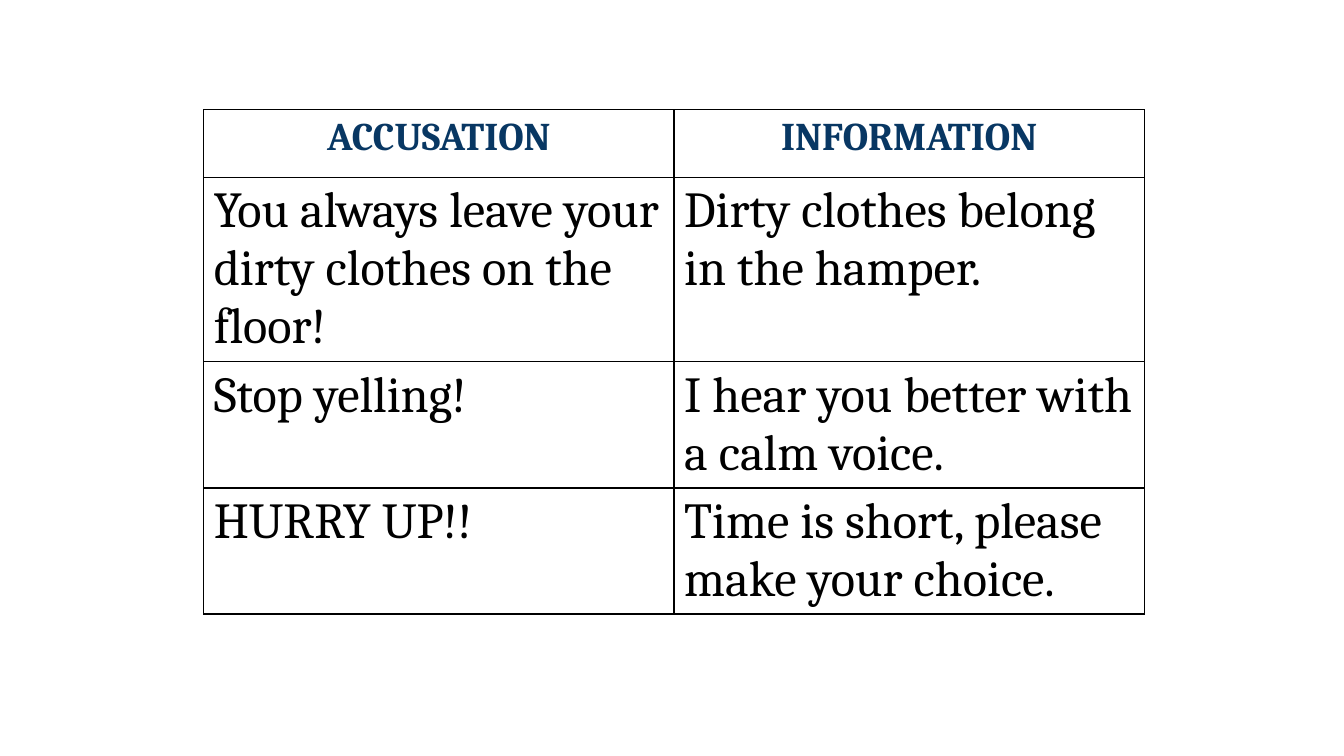
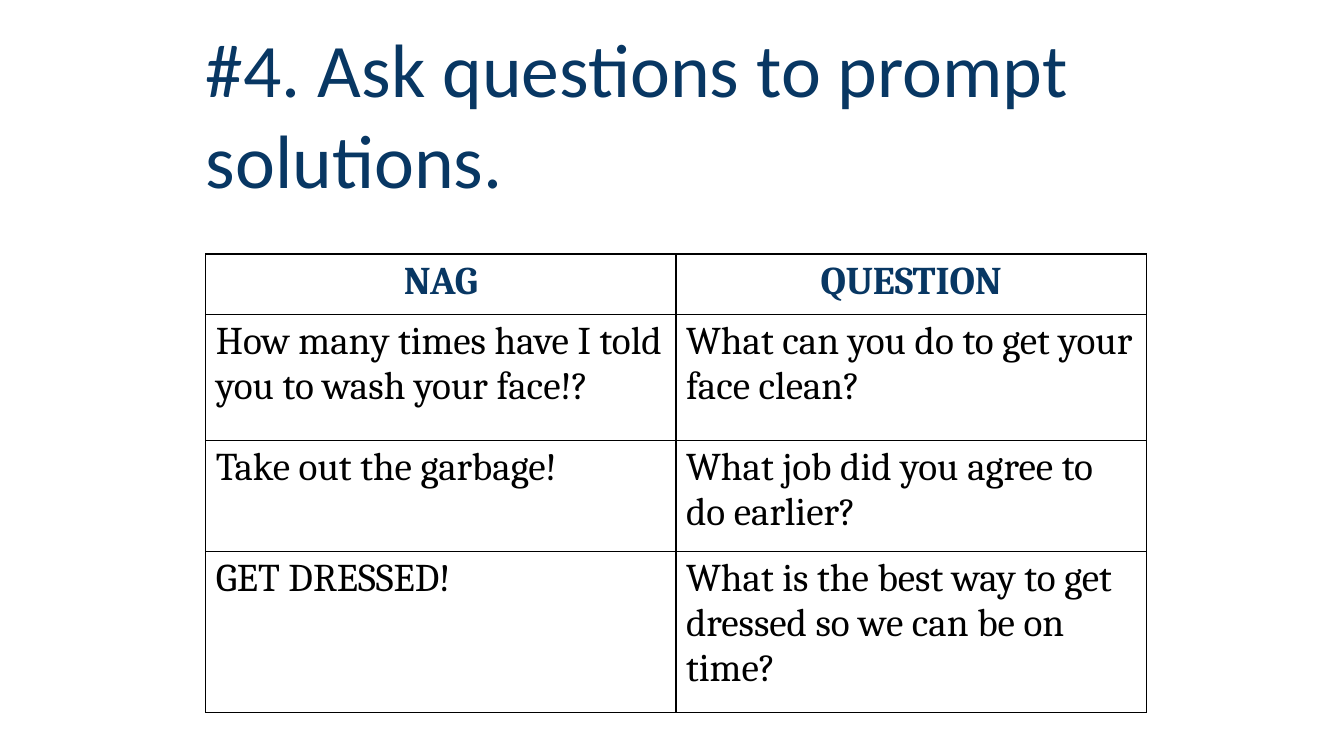
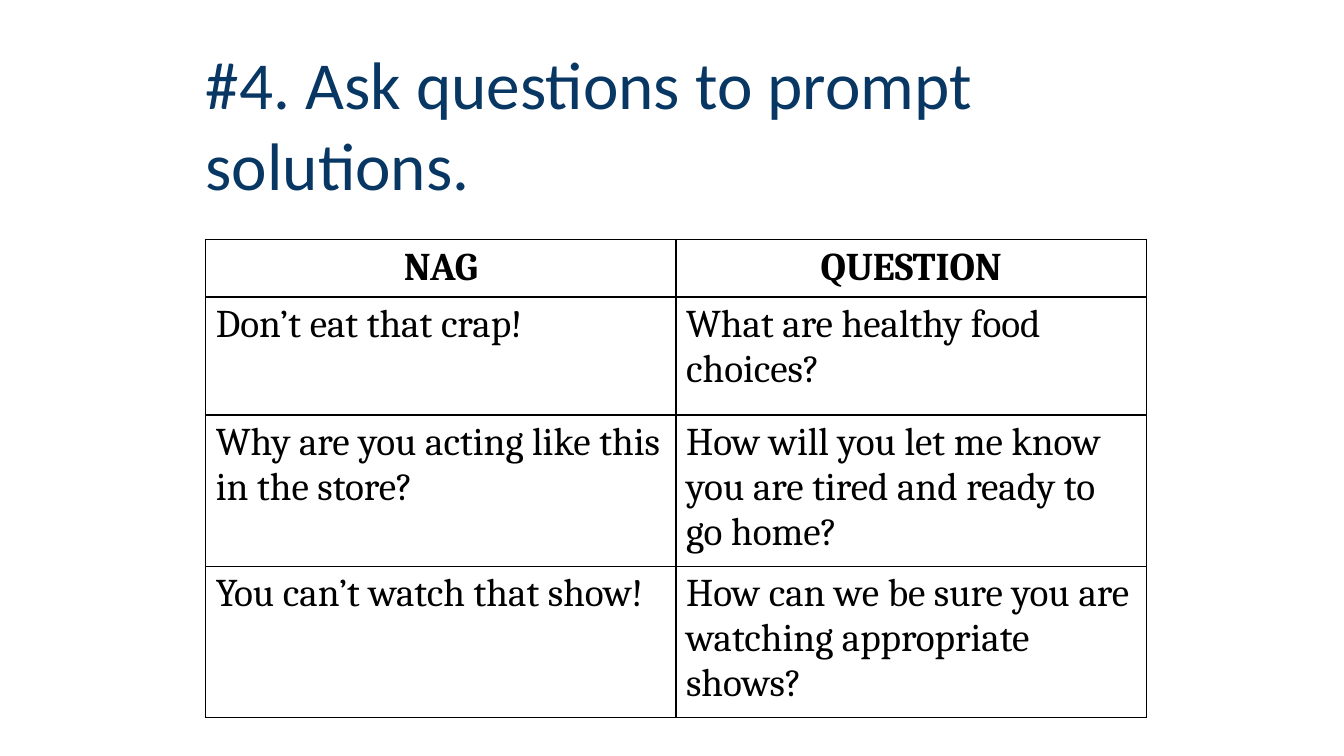
import pptx
import pptx.util
import pptx.dml.color
import pptx.enum.text
import pptx.oxml
import pptx.oxml.ns
from pptx.util import Inches

COLORS = {"navy": "083763", "black": "000000", "white": "FFFFFF"}
TITLE_FONT, TABLE_FONT = "Calibri", "Cambria"
LEFT, WIDTH = 2.04, 9.33
BORDER_WIDTH = pptx.util.Pt(1)


def add_run(p, text, font, size, color, bold=False):
    r = p.add_run()
    r.text = text
    r.font.name = font
    r.font.size = pptx.util.Pt(size)
    r.font.bold = bold
    r.font.color.rgb = pptx.dml.color.RGBColor.from_string(COLORS[color])


def add_slide(prs):
    s = prs.slides.add_slide(prs.slide_layouts[6])
    s.background.fill.solid()
    s.background.fill.fore_color.rgb = pptx.dml.color.RGBColor.from_string(COLORS["white"])
    return s


def add_title(s, text, size):
    sp = s.shapes.add_textbox(Inches(LEFT), Inches(0.54), Inches(WIDTH), Inches(1.48))
    tf = sp.text_frame
    tf.word_wrap = True
    tf.vertical_anchor = pptx.enum.text.MSO_ANCHOR.BOTTOM
    tf.margin_left = tf.margin_right = tf.margin_bottom = 0
    tf.margin_top = Inches(0.05)
    add_run(tf.paragraphs[0], text, TITLE_FONT, size, "navy")


def set_borders(cell):
    tc_pr = cell._tc.get_or_add_tcPr()
    for i, side in enumerate(("lnL", "lnR", "lnT", "lnB")):
        # Borders must come before the fill in the cell properties
        tc_pr.insert(i, pptx.oxml.parse_xml(
            f'<a:{side} {pptx.oxml.ns.nsdecls("a")} w="{BORDER_WIDTH}"><a:solidFill>'
            f'<a:srgbClr val="{COLORS["black"]}"/></a:solidFill></a:{side}>'))


def add_comparison(s, rows, heights, top, left=LEFT, size=28, head_color="navy"):
    frame = s.shapes.add_table(len(rows), 2, Inches(left), Inches(top),
                               Inches(WIDTH), Inches(sum(heights)))
    table = frame.table
    table.horz_banding = False
    for i, (texts, height) in enumerate(zip(rows, heights)):
        table.rows[i].height = Inches(height)
        head = i == 0
        for j, text in enumerate(texts):
            cell = table.cell(i, j)
            cell.fill.background()
            set_borders(cell)
            p = cell.text_frame.paragraphs[0]
            if head:
                p.alignment = pptx.enum.text.PP_ALIGN.CENTER
            add_run(p, text, TABLE_FONT, 28 if head else size,
                    head_color if head else "black", head)


def main():
    prs = pptx.Presentation()
    prs.slide_width, prs.slide_height = Inches(13.33), Inches(7.5)
    question_title = "#4. Ask questions to prompt solutions."
    question_head = ("NAG", "QUESTION")

    # Accusation versus information
    s = add_slide(prs)
    add_comparison(s, [
        ("ACCUSATION", "INFORMATION"),
        ("You always leave your dirty clothes on the floor!",
         "Dirty clothes belong in the hamper."),
        ("Stop yelling!", "I hear you better with a calm voice."),
        ("HURRY UP!!", "Time is short, please make your choice."),
    ], (0.67, 1.83, 1.25, 1.25), top=1.09, left=2.02, size=36)

    # Nagging versus questions at home
    s = add_slide(prs)
    add_title(s, question_title, 54)
    add_comparison(s, [
        question_head,
        ("How many times have I told you to wash your face!?",
         "What can you do to get your face clean?"),
        ("Take out the garbage!", "What job did you agree to do earlier?"),
        ("GET DRESSED!", "What is the best way to get dressed so we can be on time?"),
    ], (0.6, 1.25, 1.1, 1.6), top=2.52)

    # Nagging versus questions about choices
    s = add_slide(prs)
    add_title(s, question_title, 48)
    add_comparison(s, [
        question_head,
        ("Don’t eat that crap!", "What are healthy food choices?"),
        ("Why are you acting like this in the store?",
         "How will you let me know you are tired and ready to go home?"),
        ("You can’t watch that show!",
         "How can we be sure you are watching appropriate shows?"),
    ], (0.55, 1.17, 1.44, 1.44), top=2.38, head_color="black")

    prs.save("out.pptx")


if __name__ == "__main__":
    main()
